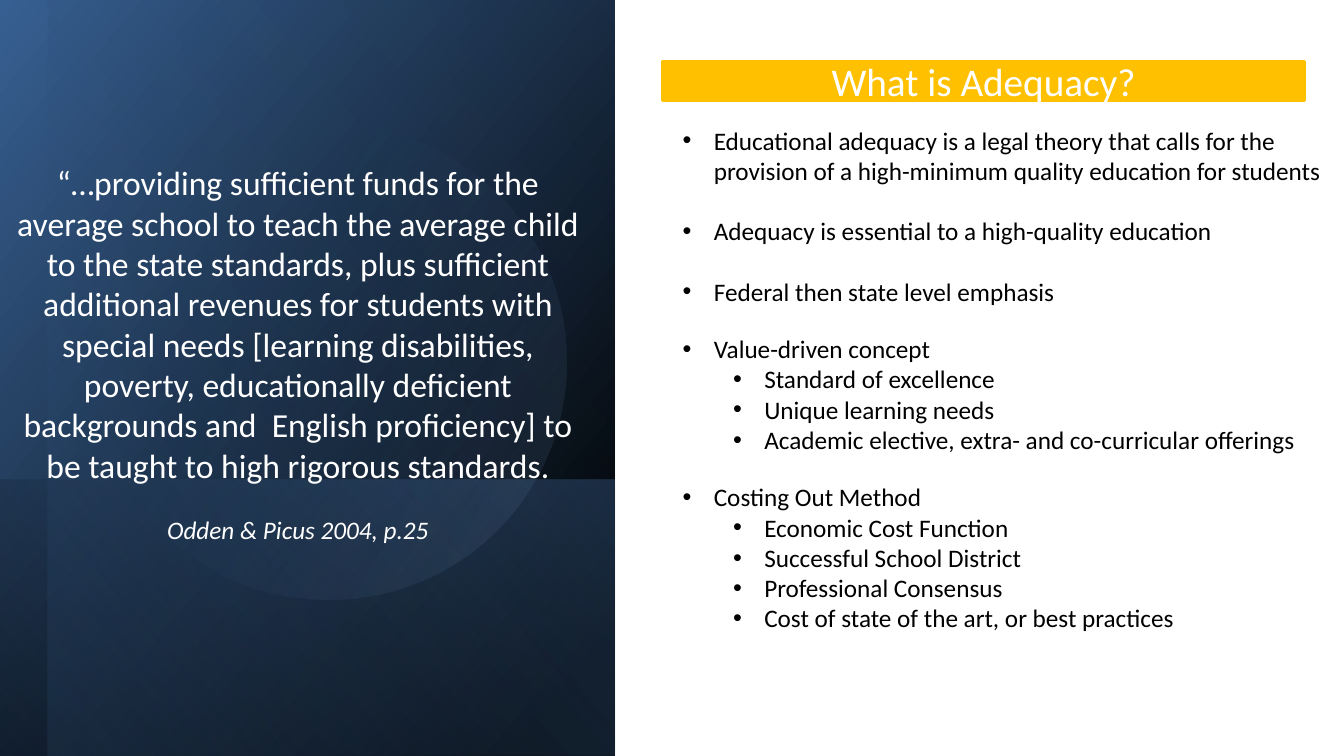
from lxml import etree
from pptx import Presentation
from pptx.dml.color import RGBColor
from pptx.enum.shapes import MSO_SHAPE
from pptx.enum.text import MSO_ANCHOR, MSO_AUTO_SIZE, PP_ALIGN
from pptx.oxml.ns import qn
from pptx.util import Inches, Pt

RECTANGLE, OVAL = MSO_SHAPE.RECTANGLE, MSO_SHAPE.OVAL
MIDDLE, TOP = MSO_ANCHOR.MIDDLE, MSO_ANCHOR.TOP
CENTER, LEFT = PP_ALIGN.CENTER, PP_ALIGN.LEFT
NO_AUTOFIT = MSO_AUTO_SIZE.NONE

BLACK = RGBColor(0x00, 0x00, 0x00)
WHITE = RGBColor(0xFF, 0xFF, 0xFF)
GOLD = RGBColor(0xFF, 0xC0, 0x00)
DEEP_BLUE = RGBColor(0x37, 0x60, 0x92)
BLUE = RGBColor(0x4F, 0x81, 0xBD)
PALE_BLUE = RGBColor(0x95, 0xB3, 0xD7)

FONT = "Calibri"
LINE_GAP = 21.5
GROUP_GAP = 19.5

QUOTE = (
    "“…providing sufficient funds for the average school to teach the average "
    "child to the state standards, plus sufficient additional revenues for "
    "students with special needs [learning disabilities, poverty, educationally "
    "deficient backgrounds and  English proficiency] to be taught to high "
    "rigorous standards."
)

# Each point: text, gap above in points, sub-points
ADEQUACY_POINTS = [
    ("Educational adequacy is a legal theory that calls for the provision of a "
     "high-minimum quality education for students", 0, []),
    ("Adequacy is essential to a high-quality education", LINE_GAP, []),
    ("Federal then state level emphasis", LINE_GAP, []),
    ("Value-driven concept", GROUP_GAP, [
        "Standard of excellence",
        "Unique learning needs",
        "Academic elective, extra- and co-curricular offerings",
    ]),
    ("Costing Out Method", GROUP_GAP, [
        "Economic Cost Function",
        "Successful School District",
        "Professional Consensus",
        "Cost of state of the art, or best practices",
    ]),
]


def place(shape, left, top, width, height):
    shape.left, shape.top = Inches(left), Inches(top)
    shape.width, shape.height = Inches(width), Inches(height)


def write(frame, text, *, size, color, align=LEFT, italic=False, gap=0, level=0):
    """Fill the first empty paragraph, or add one, and format it."""
    first = frame.paragraphs[0]
    paragraph = frame.add_paragraph() if first.runs else first
    paragraph.alignment = align
    paragraph.level = level
    paragraph.space_before, paragraph.space_after = Pt(gap), Pt(0)
    run = paragraph.add_run()
    run.text = text
    run.font.name, run.font.size = FONT, Pt(size)
    run.font.italic = italic
    run.font.color.rgb = color
    return paragraph


def add_bullet(paragraph, indent):
    properties = paragraph._p.get_or_add_pPr()
    properties.set("marL", str(Inches(indent)))
    properties.set("indent", str(Inches(-0.31)))
    bullet_font = etree.SubElement(properties, qn("a:buFont"))
    bullet_font.set("typeface", "Arial")
    etree.SubElement(properties, qn("a:buChar")).set("char", "•")


def set_gradient(shape, stops, angle):
    """Stops are (position %, colour, opacity %)."""
    gradient = etree.Element(qn("a:gradFill"), rotWithShape="1")
    stop_list = etree.SubElement(gradient, qn("a:gsLst"))
    for position, color, opacity in stops:
        stop = etree.SubElement(stop_list, qn("a:gs"), pos=str(position * 1000))
        tint = etree.SubElement(stop, qn("a:srgbClr"), val=str(color))
        if opacity < 100:
            etree.SubElement(tint, qn("a:alpha"), val=str(opacity * 1000))
    etree.SubElement(gradient, qn("a:lin"), ang=str(angle * 60000), scaled="0")
    shape._element.spPr.find(qn("a:prstGeom")).addnext(gradient)


def add_glow(slide, kind, box, stops, angle, rotation=90, flip=True):
    glow = slide.shapes.add_shape(kind, *map(Inches, box))
    glow.shadow.inherit = False
    glow.line.fill.background()
    glow.rotation = rotation
    if flip:
        glow._element.spPr.find(qn("a:xfrm")).set("flipH", "1")
    set_gradient(glow, stops, angle)


def add_quote(slide):
    quote = slide.shapes.add_textbox(*map(Inches, (0, 1.56, 5.91, 3.94))).text_frame
    quote.word_wrap = True
    write(quote, QUOTE, size=24, color=WHITE, align=CENTER)
    write(quote, "Odden & Picus 2004, p.25", size=18, color=WHITE,
          align=CENTER, italic=True, gap=LINE_GAP)


def fill_title(title):
    place(title, 6.57, 0.61, 6.37, 0.39)
    title.fill.solid()
    title.fill.fore_color.rgb = GOLD
    title.line.color.rgb = GOLD
    title.line.width = Pt(2)
    heading = title.text_frame
    heading.auto_size = NO_AUTOFIT
    heading.vertical_anchor = MIDDLE
    write(heading, "What is Adequacy?", size=28, color=WHITE, align=CENTER)


def fill_points(body):
    place(body, 6.67, 1.19, 6.63, 5.49)
    points = body.text_frame
    points.auto_size = NO_AUTOFIT
    points.vertical_anchor = TOP
    points.word_wrap = True
    for point, gap, details in ADEQUACY_POINTS:
        add_bullet(write(points, point, size=18, color=BLACK, gap=gap), 0.31)
        for detail in details:
            add_bullet(write(points, detail, size=18, color=BLACK, level=1), 0.81)


def main():
    deck = Presentation()
    deck.slide_width, deck.slide_height = Inches(13.33), Inches(7.5)
    slide = deck.slides.add_slide(deck.slide_layouts[1])

    # Dark panel with layered gradients
    add_glow(slide, RECTANGLE, (-0.7, 0.7, 7.5, 6.1),
             [(8, BLACK, 100), (100, DEEP_BLUE, 100)], 50)
    add_glow(slide, RECTANGLE, (1.67, 3.08, 2.74, 6.1),
             [(2, BLUE, 29), (100, BLACK, 30)], 130)
    add_glow(slide, RECTANGLE, (-0.46, 0.93, 7.5, 5.63),
             [(0, BLACK, 0), (99, BLUE, 11)], 130)
    add_glow(slide, OVAL, (0.9, 1.23, 4.72, 4.72),
             [(39, BLUE, 0), (100, PALE_BLUE, 15)], 290, rotation=101.6, flip=False)

    # Quote on the panel
    add_quote(slide)

    # Heading and points
    fill_title(slide.shapes.title)
    fill_points(slide.placeholders[1])

    deck.save("out.pptx")


if __name__ == "__main__":
    main()
